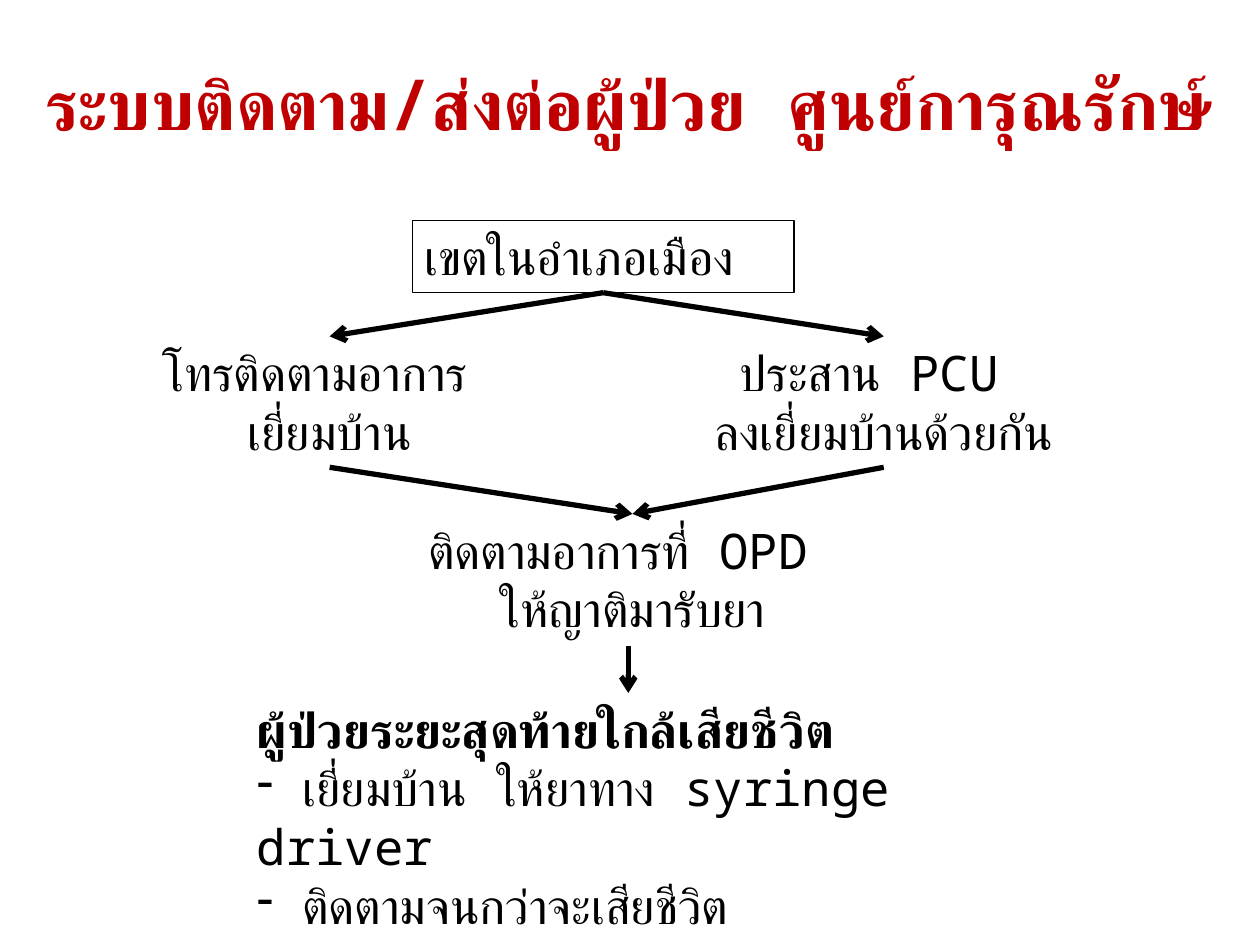
from lxml import etree
from pptx import Presentation
from pptx.dml.color import RGBColor
from pptx.enum.shapes import MSO_CONNECTOR, MSO_SHAPE
from pptx.enum.text import MSO_ANCHOR, MSO_AUTO_SIZE, PP_ALIGN
from pptx.oxml.ns import qn
from pptx.util import Cm, Pt

LINE = MSO_CONNECTOR.STRAIGHT
RECT = MSO_SHAPE.RECTANGLE
TOP, MIDDLE = MSO_ANCHOR.TOP, MSO_ANCHOR.MIDDLE
GROW = MSO_AUTO_SIZE.SHAPE_TO_FIT_TEXT
LEFT, CENTER = PP_ALIGN.LEFT, PP_ALIGN.CENTER
FONT = "Noto Sans Mono"
COLORS = {"title": "C00000", "ink": "000000"}
ABOVE, BELOW = 0, 2


def color(name):
    return RGBColor.from_string(COLORS[name])


def style(para, size=28, bold=False, ink="ink", align=CENTER):
    para.alignment = align
    font = para.font
    font.name, font.size, font.bold = FONT, Pt(size), bold
    font.color.rgb = color(ink)
    props = para._p.pPr.find(qn("a:defRPr"))
    etree.SubElement(props, qn("a:cs"), typeface=FONT)


def add_dash(para):
    props = para._p.get_or_add_pPr()
    etree.SubElement(props, qn("a:buChar"), char="-")


def fill_text(shape, lines, wrap=False, dashed=(), bold=(), align=CENTER):
    frame = shape.text_frame
    frame.word_wrap = wrap
    frame.auto_size = GROW
    frame.vertical_anchor = TOP
    frame.text = "\n".join(lines)
    for i, para in enumerate(frame.paragraphs):
        if i in dashed:
            add_dash(para)
        style(para, bold=i in bold, align=align)


def add_title(slide, text):
    box = slide.shapes.add_textbox(Cm(0), Cm(0.76), Cm(25.4), Cm(3.18))
    frame = box.text_frame
    frame.word_wrap = True
    frame.vertical_anchor = MIDDLE
    frame.text = text
    para = frame.paragraphs[0]
    para.line_spacing = Pt(32)
    style(para, 40, True, "title")


def add_frame(slide, place, text):
    box = slide.shapes.add_shape(RECT, *map(Cm, place))
    box.shadow.inherit = False
    box.fill.background()
    box.line.color.rgb = color("ink")
    box.line.width = Pt(0.75)
    fill_text(box, [text], align=LEFT)
    return box


def add_text(slide, place, lines, **opts):
    box = slide.shapes.add_textbox(*map(Cm, place))
    fill_text(box, lines, **opts)
    return box


def add_arrow(slide, start, end):
    arrow = slide.shapes.add_connector(LINE, 0, 0, 0, 0)
    if start is None:
        arrow.begin_x = end.left + end.width // 2
        arrow.begin_y = Cm(13.03)
    else:
        arrow.begin_connect(start, BELOW)
    arrow.end_connect(end, ABOVE)
    arrow.line.color.rgb = color("ink")
    arrow.line.width = Pt(3)
    etree.SubElement(arrow.line._get_or_add_ln(), qn("a:tailEnd"), type="arrow")
    etree.SubElement(arrow._element.spPr, qn("a:effectLst"))


def main():
    deck = Presentation()
    deck.slide_width, deck.slide_height = Cm(25.4), Cm(19.05)
    slide = deck.slides.add_slide(deck.slide_layouts[6])

    add_title(slide, "ระบบติดตาม/ส่งต่อผู้ป่วย ศูนย์การุณรักษ์")
    zone = add_frame(slide, (8.31, 4.45, 7.7, 1.45), "เขตในอำเภอเมือง")
    call = add_text(slide, (2.67, 6.78, 7.95, 2.64),
                    ["โทรติดตามอาการ ", "เยี่ยมบ้าน"])
    visit = add_text(slide, (12.95, 6.78, 9.73, 2.64),
                     ["ประสาน PCU \vลงเยี่ยมบ้านด้วยกัน"], wrap=True)
    clinic = add_text(slide, (8.1, 10.36, 9.3, 2.64),
                      ["ติดตามอาการที่ OPD ", "ให้ญาติมารับยา"])
    final = add_text(slide, (4.93, 13.97, 15.47, 3.84),
                     ["ผู้ป่วยระยะสุดท้ายใกล้เสียชีวิต",
                      " เยี่ยมบ้าน ให้ยาทาง syringe driver",
                      " ติดตามจนกว่าจะเสียชีวิต"],
                     wrap=True, dashed=(1, 2), bold=(0,), align=LEFT)

    for side in (call, visit):
        add_arrow(slide, zone, side)
        add_arrow(slide, side, clinic)
    add_arrow(slide, None, final)

    deck.save("out.pptx")


if __name__ == "__main__":
    main()
